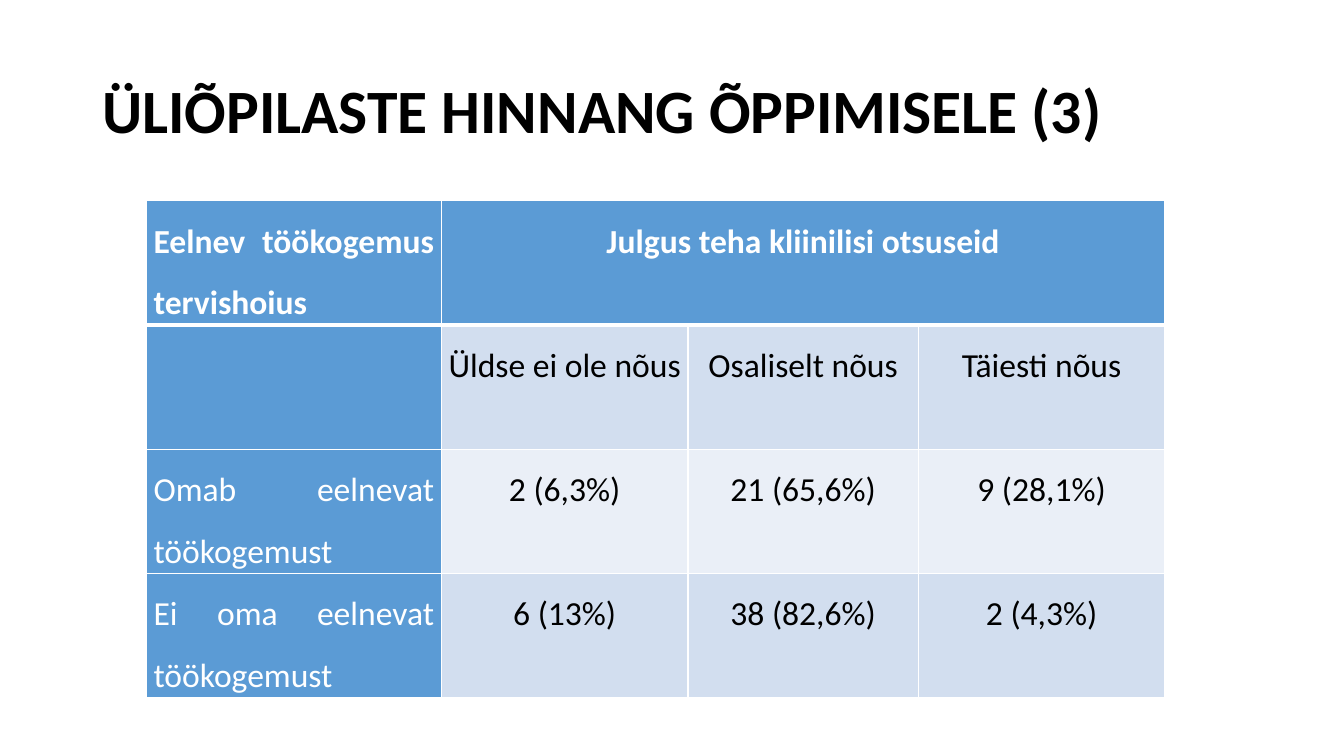
from lxml.etree import SubElement
from pptx import Presentation
from pptx.dml.color import RGBColor
from pptx.enum.text import MSO_ANCHOR as Anchor, PP_ALIGN as Align
from pptx.oxml.ns import qn
from pptx.util import Cm, Pt

COLORS = {
    "text": "000000",
    "white": "FFFFFF",
    "header": "5B9BD5",
    "band_dark": "D2DEEF",
    "band_light": "EAEFF7",
}


def write(frame, text, size=24, color="text", bold=False, align=Align.CENTER, spacing=1.5):
    frame.word_wrap = True
    para = frame.paragraphs[0]
    para.alignment = align
    para.line_spacing = spacing
    span = para.add_run()
    span.text = text
    span.font.name = "Calibri"
    span.font.size = Pt(size)
    span.font.bold = bold
    span.font.color.rgb = RGBColor.from_string(COLORS[color])


deck = Presentation()
deck.slide_width, deck.slide_height = Cm(33.87), Cm(19.05)
page = deck.slides.add_slide(deck.slide_layouts[6])

# Title
box = page.shapes.add_textbox(Cm(2.33), Cm(1.01), Cm(29.21), Cm(3.68))
box.text_frame.vertical_anchor = Anchor.MIDDLE
write(box.text_frame, "ÜLIÕPILASTE HINNANG ÕPPIMISELE (3)", size=44, bold=True,
      align=Align.LEFT, spacing=0.9)

# Table grid
rows = [
    ["Eelnev töökogemus tervishoius", "Julgus teha kliinilisi otsuseid", "", ""],
    ["", "Üldse ei ole nõus", "Osaliselt nõus", "Täiesti nõus"],
    ["Omab eelnevat töökogemust", "2 (6,3%)", "21 (65,6%)", "9 (28,1%)"],
    ["Ei oma eelnevat töökogemust", "6 (13%)", "38 (82,6%)", "2 (4,3%)"],
]
widths = [7.43, 6.22, 5.8, 6.22]
row_height = 3.13
table = page.shapes.add_table(len(rows), len(widths), Cm(3.69), Cm(5.06),
                              Cm(sum(widths)), Cm(row_height * len(rows))).table
for column, width in zip(table.columns, widths):
    column.width = Cm(width)
for row in table.rows:
    row.height = Cm(row_height)
table.cell(0, 1).merge(table.cell(0, 3))

# Cells: white borders, header row and column, banded body
for r, texts in enumerate(rows):
    for c, text in enumerate(texts):
        cell = table.cell(r, c)
        cell.margin_left = cell.margin_right = Cm(0.18)
        cell.margin_top = cell.margin_bottom = 0
        props = cell._tc.get_or_add_tcPr()
        for side in ("L", "R", "T", "B"):
            under_header = (r, side) in ((0, "B"), (1, "T"))
            line = SubElement(props, qn(f"a:ln{side}"), w=str(Pt(3 if under_header else 1)))
            fill = SubElement(line, qn("a:solidFill"))
            SubElement(fill, qn("a:srgbClr"), val=COLORS["white"])
        is_header = r == 0 or c == 0
        shade = "header" if is_header else "band_dark" if r % 2 else "band_light"
        cell.fill.solid()
        cell.fill.fore_color.rgb = RGBColor.from_string(COLORS[shade])
        if text:
            write(cell.text_frame, text, color="white" if is_header else "text",
                  bold=r == 0, align=Align.CENTER if c else Align.JUSTIFY)

deck.save("out.pptx")
